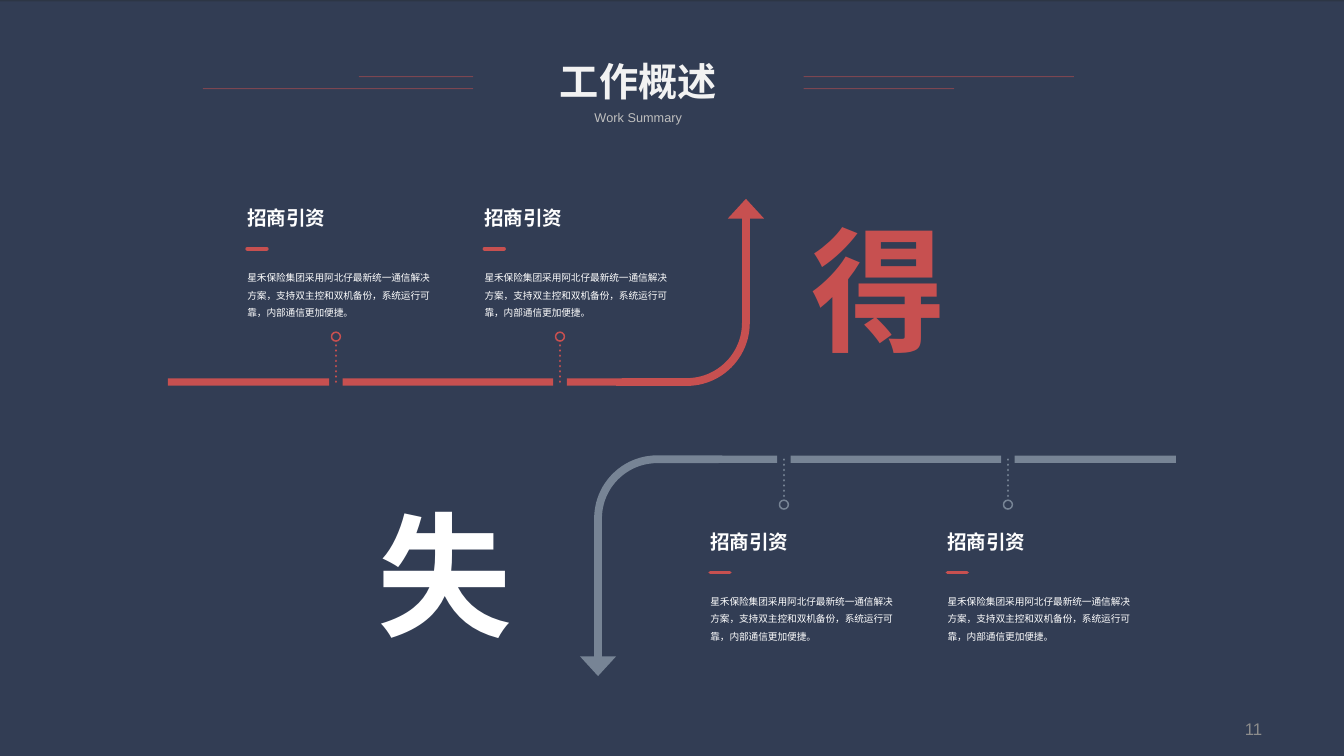
from math import cos, pi, sin

from lxml import etree
from pptx import Presentation
from pptx import util as u
from pptx.dml.color import RGBColor
from pptx.enum import dml, shapes, text
from pptx.oxml.ns import qn

# The page is a grid of 100 columns by 56.25 rows of square cells.
COLUMNS, ROWS = 100, 56.25
BASE = RGBColor(0x40, 0x3F, 0x57)
SHADE = RGBColor(0x2C, 0x36, 0x44)
TINT = RGBColor(0x48, 0x5B, 0x92)
RED = RGBColor(0xC7, 0x50, 0x50)
STEEL = RGBColor(0x77, 0x84, 0x95)
WHITE = RGBColor(0xFF, 0xFF, 0xFF)
PALE = RGBColor(0xF2, 0xF2, 0xF2)
SILVER = RGBColor(0xBF, 0xBF, 0xBF)
GREY = RGBColor(0x8C, 0x8C, 0x8C)

HEADING = "招商引资"
DETAIL = ("星禾保险集团采用阿北仔最新统一通信解决方案，支持双主控和双机备份，"
          "系统运行可靠，内部通信更加便捷。")


def cells(*counts):
    return [u.Inches(count / 10) for count in counts]


def set_alpha(fill_parent, percent):
    color = fill_parent.find(".//" + qn("a:srgbClr"))
    etree.SubElement(color, qn("a:alpha")).set("val", str(percent * 1000))


def paint(shape, color):
    shape.shadow.inherit = False
    shape.fill.solid()
    shape.fill.fore_color.rgb = color
    shape.line.fill.background()


def add_block(page, box, color, alpha=None):
    block = page.shapes.add_shape(shapes.MSO_SHAPE.RECTANGLE, *cells(*box))
    paint(block, color)
    if alpha:
        set_alpha(block._element.spPr, alpha)


def add_line(page, start, end, color, width, alpha=None, dash=None, cap="flat"):
    line = page.shapes.add_connector(shapes.MSO_CONNECTOR.STRAIGHT, *cells(*start, *end))
    line.line.color.rgb = color
    line.line.width = u.Pt(width)
    if dash:
        line.line.dash_style = dash
    properties = line._element.spPr
    properties.find(qn("a:ln")).set("cap", cap)
    etree.SubElement(properties, qn("a:effectLst"))
    if alpha:
        set_alpha(properties, alpha)


def add_text(page, box, words, size, color, bold=False, align=text.PP_ALIGN.LEFT,
             inset=True, wrap=True, spacing=None, anchor=text.MSO_ANCHOR.TOP):
    frame = page.shapes.add_textbox(*cells(*box)).text_frame
    frame.word_wrap = wrap
    frame.vertical_anchor = anchor
    if not inset:
        frame.margin_left = frame.margin_right = 0
        frame.margin_top = frame.margin_bottom = 0
    para = frame.paragraphs[0]
    para.text = words
    para.alignment = align
    if spacing:
        para.line_spacing = spacing
    font = para.font
    font.name, font.size, font.bold = "Arial", u.Pt(size), bold
    font.color.rgb = color


def backdrop(page):
    page.background.fill.solid()
    page.background.fill.fore_color.rgb = BASE
    add_block(page, (0, 0, COLUMNS, ROWS), SHADE, 90)
    add_block(page, (0, 0.1, COLUMNS, ROWS - 0.1), TINT, 20)


def header(page, box):
    """Title and subtitle between two pairs of thin rules."""
    left, top, width, height = box
    middle = left + 32.4
    center = text.PP_ALIGN.CENTER
    add_text(page, (middle - 8.65, top + 3.9, 17.3, 2.1), "Work Summary", 6.8, SILVER,
             align=center)
    add_text(page, (middle - 11.2, top, 22.4, 4.5), "工作概述", 21, PALE, True, center)
    inner_left, inner_right, right = left + 20.1, left + 44.7, left + width
    rules = [(inner_left - 8.5, inner_left, 1.9), (left, inner_left, 2.8),
             (inner_right, right, 1.9), (inner_right, inner_right + 11.2, 2.8)]
    for start, end, down in rules:
        add_line(page, (start, top + down), (end, top + down), RED, 0.5, alpha=50)


def track(page, box, color, turned=False):
    """Broken rail with two pins and a bent arrow; turned rotates it by 180 degrees."""
    left, top, width, height = box
    rail, half, pins, gap = 0.27, 0.29, (12.5, 29.17), 0.5

    def place(along, up):
        if turned:
            return left + width - along, top + up
        return left + along, top + height - up

    for start, end in ((0, pins[0] - gap), (pins[0] + gap, pins[1] - gap)):
        x = min(place(start, 0)[0], place(end, 0)[0])
        y = min(place(0, 0)[1], place(0, 2 * rail)[1])
        add_block(page, (x, y, end - start, 2 * rail), color)

    tip, radius = width - 1.35, 4.4
    bend_x, bend_y = tip - radius, rail + radius
    angles = [pi / 2 * step / 24 for step in range(25)]

    def arc(size):
        return [(bend_x + size * sin(a), bend_y - size * cos(a)) for a in angles]

    neck = height - 1.47
    outline = [(pins[1] + gap, 0), *arc(radius + half), (tip + half, neck),
               (width, neck), (tip, height), (tip - 1.35, neck), (tip - half, neck),
               *reversed(arc(radius - half)), (pins[1] + gap, 2 * rail)]
    points = [cells(*place(*point)) for point in outline]
    builder = page.shapes.build_freeform(*points[0])
    builder.add_line_segments(points[1:])
    paint(builder.convert_to_shape(), color)

    for pin in pins:
        add_line(page, place(pin, 3.0), place(pin, 0.15), color, 1.4,
                 dash=dml.MSO_LINE.ROUND_DOT, cap="rnd")
        x, y = place(pin, 3.65)
        ring = page.shapes.add_shape(shapes.MSO_SHAPE.OVAL,
                                     *cells(x - 0.33, y - 0.33, 0.66, 0.66))
        ring.shadow.inherit = False
        ring.fill.background()
        ring.line.color.rgb = color
        ring.line.width = u.Pt(0.8)


def note(page, box):
    left, top, width, height = box
    add_line(page, (left, top + 3.2), (left + 1.45, top + 3.2), RED, 2, cap="rnd")
    add_text(page, (left, top, 5.9, 1.8), HEADING, 10.5, WHITE, True, inset=False, wrap=False)
    add_text(page, (left, top + 4.5, width, height - 4.5), DETAIL, 5.2, WHITE,
             inset=False, spacing=1.5)


def note_pair(page, box):
    left, top, width, height = box
    note_width = 14.1
    for x in (left, left + width - note_width):
        note(page, (x, top, note_width, height))


def verdict(page, box, word, color):
    add_text(page, box, word, 72, color, True, text.PP_ALIGN.CENTER, inset=False)


def page_number(page, box, number):
    add_text(page, box, number, 9, GREY, align=text.PP_ALIGN.RIGHT,
             anchor=text.MSO_ANCHOR.MIDDLE)


def main():
    deck = Presentation()
    deck.slide_width, deck.slide_height = cells(COLUMNS, ROWS)
    page = deck.slides.add_slide(deck.slide_layouts[6])
    backdrop(page)
    page_number(page, (90.2, 52.2, 4.7, 4), "11")
    verdict(page, (58.1, 15.4, 14.5, 12.1), "得", RED)
    verdict(page, (25.8, 36.6, 14.5, 12.1), "失", WHITE)
    track(page, (12.5, 14.8, 44.35, 13.9), RED)
    track(page, (43.15, 33.9, 44.35, 16.4), STEEL, turned=True)
    header(page, (15.1, 3.8, 64.8, 6))
    note_pair(page, (18.4, 15.3, 31.75, 8.3))
    note_pair(page, (52.85, 39.4, 31.75, 8.3))
    deck.save("out.pptx")


if __name__ == "__main__":
    main()
